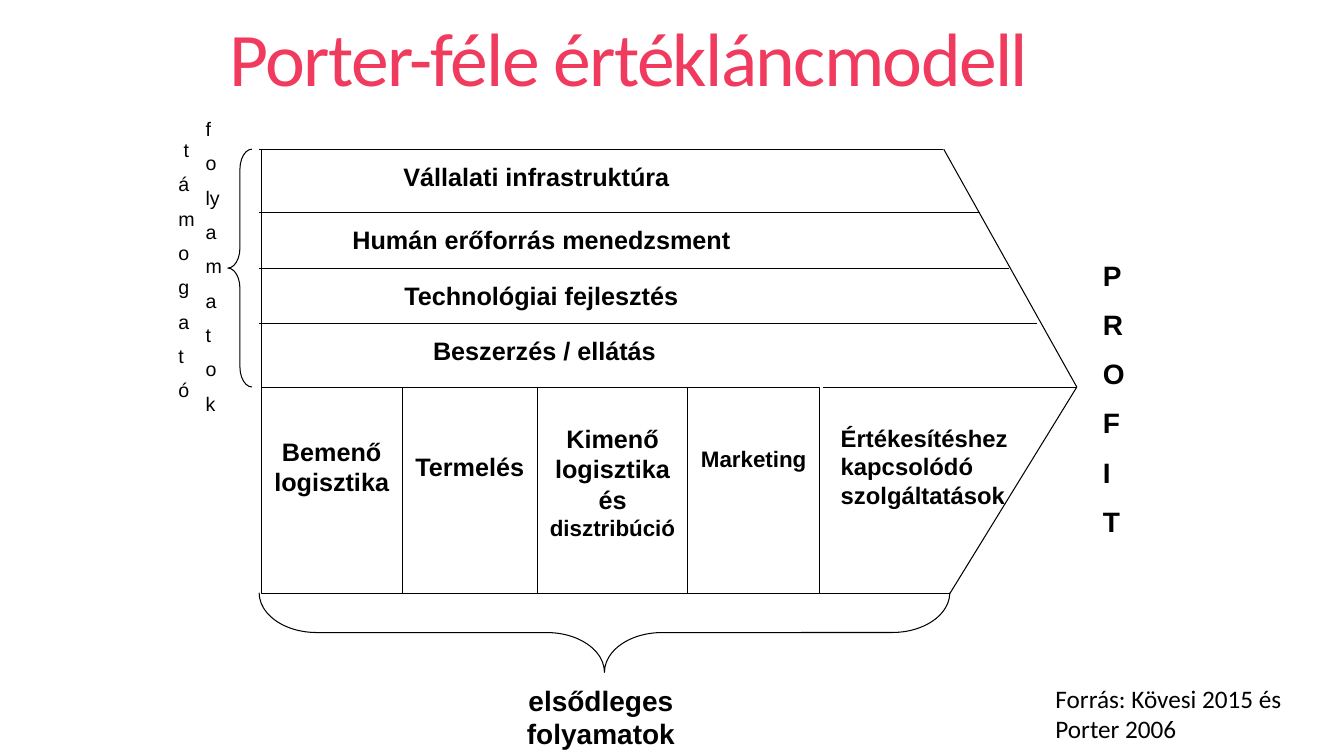
from pptx import Presentation
from pptx.dml.color import RGBColor
from pptx.enum.shapes import MSO_CONNECTOR, MSO_SHAPE
from pptx.enum.text import MSO_ANCHOR, MSO_AUTO_SIZE, PP_ALIGN
from pptx.oxml.ns import qn
from pptx.util import Pt
from lxml.etree import SubElement

PX = 9144
BLACK = RGBColor(0x00, 0x00, 0x00)
PINK = RGBColor(0xF0, 0x3B, 0x5E)
CENTER, LEFT = PP_ALIGN.CENTER, PP_ALIGN.LEFT


def px(*lengths):
    """Turn px lengths into EMU."""
    return [n * PX for n in lengths]


def write(tf, *paras, size=18, bold=True, font="Arial", color=BLACK,
          align=LEFT, anchor=MSO_ANCHOR.TOP, top=5):
    """Fill a text frame; each paragraph is a string or a list of (text, size) runs."""
    tf.word_wrap = True
    tf.auto_size = MSO_AUTO_SIZE.NONE
    tf.vertical_anchor = anchor
    tf.margin_left, tf.margin_top, tf.margin_right, tf.margin_bottom = px(10, top, 10, 5)
    for i, para in enumerate(paras):
        p = tf.add_paragraph() if i else tf.paragraphs[0]
        p.alignment = align
        if i:
            p.space_before = Pt(size * 0.55)
        for text, run_size in [(para, size)] if isinstance(para, str) else para:
            r = p.add_run()
            r.text = text
            r.font.name, r.font.size, r.font.bold = font, Pt(run_size), bold
            r.font.color.rgb = color


def add_text(s, box, *paras, **fmt):
    """Add a text box."""
    write(s.shapes.add_textbox(*px(*box)).text_frame, *paras, **fmt)


def add_line(s, x1, y1, x2, y2):
    """Add a thin black line."""
    c = s.shapes.add_connector(MSO_CONNECTOR.STRAIGHT, *px(x1, y1, x2, y2))
    c.line.color.rgb = BLACK
    c.line.width = Pt(0.75)
    SubElement(c._element.spPr, qn("a:effectLst"))


def add_outline(s, kind, box):
    """Add an unfilled shape with a thin black outline."""
    sp = s.shapes.add_shape(kind, *px(*box))
    sp.shadow.inherit = False
    sp.fill.background()
    sp.line.color.rgb = BLACK
    sp.line.width = Pt(0.75)
    return sp


def add_brace(s, box, curve, rotation=0):
    """Add a left brace."""
    sp = add_outline(s, MSO_SHAPE.LEFT_BRACE, box)
    sp.adjustments[0] = curve
    sp.rotation = rotation


def add_title(s, box, text):
    """Place and format the title placeholder."""
    sp = s.shapes.title
    sp.left, sp.top, sp.width, sp.height = px(*box)
    write(sp.text_frame, text, size=54, bold=False, font="Calibri", color=PINK,
          anchor=MSO_ANCHOR.MIDDLE)
    p = sp.text_frame.paragraphs[0]
    p.line_spacing = 0.85
    p.runs[0].font._element.set("spc", "-120")


def add_support(s, box):
    """Draw the support activities as rows cut off by the upper slanted edge."""
    x, y, w, h = box
    rows = [("Vállalati infrastruktúra", 0, 676, 273),
            ("Humán erőforrás menedzsment", 63, 713, 278),
            ("Technológiai fejlesztés", 118, 742, 278),
            ("Beszerzés / ellátás", 173, 770, 281)]
    for text, dy, length, middle in rows:
        add_line(s, x - 2, y + dy, x + length, y + dy)
        add_text(s, (x + middle - 267, y + dy + 7, 534, 40), text, align=CENTER)
    add_line(s, x, y, x, y + h)
    add_line(s, x + 677, y, x + w, y + h)
    add_brace(s, (x - 33, y, 24, h), 0.833)
    add_text(s, (x - 92, y - 16, 43, 281), " t", *"ámogató", size=14, bold=False)
    add_text(s, (x - 65, y - 37, 39, 316), "f", "o", "ly", *"amatok",
             size=14, bold=False)


def add_primary(s, box):
    """Draw the primary activities as columns closed by the lower slanted edge."""
    x, y, w, h = box
    columns = [(140, 49, [("Bemenő logisztika", 18)]),
               (134, 64, [("Termelés", 18)]),
               (149, 36, [("Kimenő logisztika és ", 18), ("disztribúció", 16)]),
               (131, 58, [("Marketing", 16)])]
    left = x
    for width, top, runs in columns:
        sp = add_outline(s, MSO_SHAPE.RECTANGLE, (left, y, width, h))
        write(sp.text_frame, runs, align=CENTER, top=top)
        left += width
    foot = x + 683
    add_line(s, left + 3, y, x + w, y)
    add_line(s, x + w, y, foot, y + h)
    add_line(s, left, y + h, foot, y + h)
    add_text(s, (left + 11, y + 31, 213, 96),
             "Értékesítéshez kapcsolódó szolgáltatások", size=17)
    add_brace(s, (x + 301, y - 99, 79, 685), 0.724, 270)
    add_text(s, (x + 203, y + h + 84, 268, 77), "elsődleges folyamatok",
             size=20, align=CENTER)


def main():
    """Build the value chain slide."""
    prs = Presentation()
    prs.slide_width, prs.slide_height = px(1333, 750)
    s = prs.slides.add_slide(prs.slide_layouts[5])
    add_title(s, (218, 0, 900, 125), "Porter-féle értékláncmodell")
    add_support(s, (259, 148, 809, 236))
    add_primary(s, (259, 384, 809, 205))
    add_text(s, (1084, 252, 39, 293), *"PROFIT", size=20)
    add_text(s, (1037, 673, 296, 71), "Forrás: Kövesi 2015 és Porter 2006",
             bold=False, font="Calibri")
    prs.save("out.pptx")


if __name__ == "__main__":
    main()
